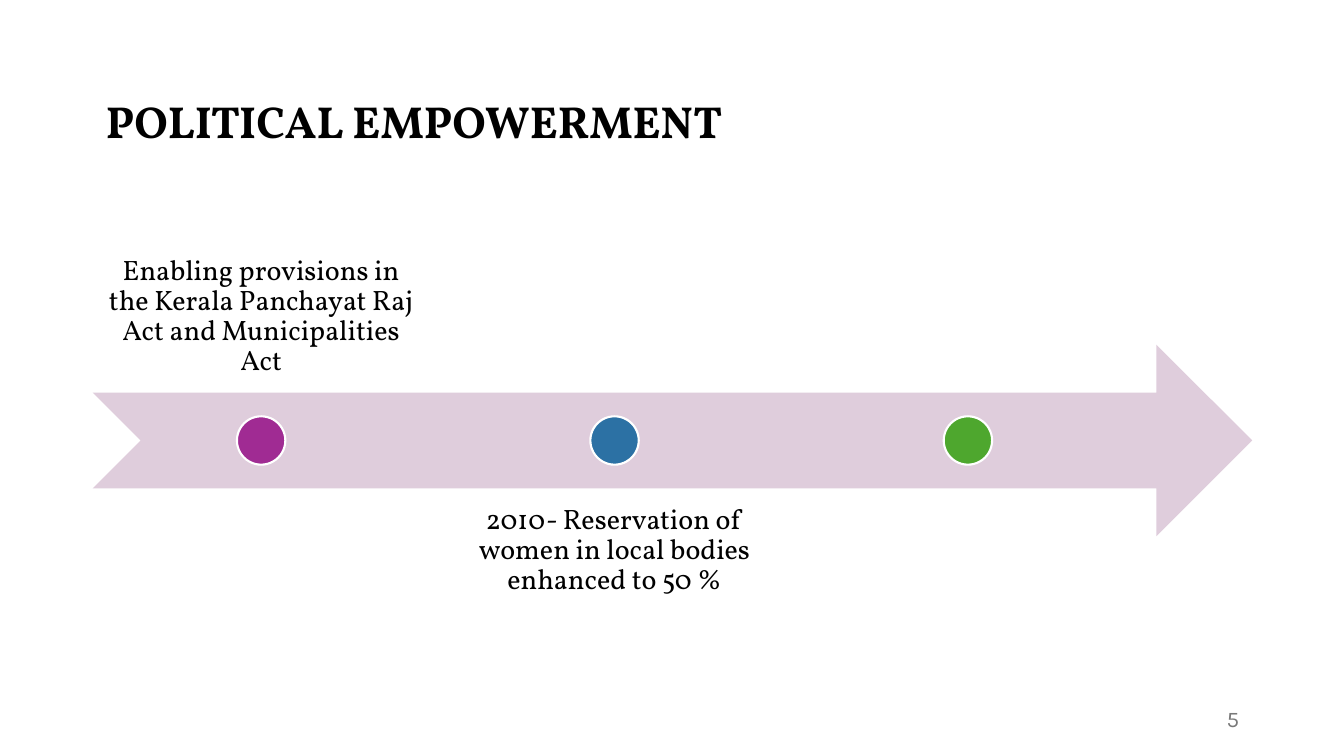
import pptx
import pptx.util
import pptx.dml.color
import pptx.enum.shapes
import pptx.enum.text

Inches = pptx.util.Inches
Pt = pptx.util.Pt
Shape = pptx.enum.shapes.MSO_SHAPE
Align = pptx.enum.text.PP_ALIGN
Anchor = pptx.enum.text.MSO_ANCHOR

TITLE = "POLITICAL EMPOWERMENT"
PAGE_NUMBER = "5"
# Milestones: dot colour, label
MILESTONES = [
    ("A02B93", "Enabling provisions in the Kerala Panchayat Raj Act and Municipalities Act"),
    ("2C71A4", "2010- Reservation of women in local bodies enhanced to 50 %"),
    ("4EA72E", ""),
]

LEFT, WIDTH = 0.92, 11.5
ARROW_TOP, BAND = 3.42, 1.9
LABEL_WIDTH, STEP = 3.34, 3.505
LABEL_TOPS = (2, 4.85)
DOT = 0.48


def color(value):
    return pptx.dml.color.RGBColor.from_string(value)


def add_text(page, place, text, size, font="Vollkorn", ink="000000", bold=False,
             align=Align.LEFT, anchor=Anchor.MIDDLE, insets=(0.13, 0.07), after=8):
    box = page.shapes.add_textbox(*map(Inches, place))
    frame = box.text_frame
    frame.word_wrap = True
    frame.vertical_anchor = anchor
    frame.margin_left = frame.margin_right = Inches(insets[0])
    frame.margin_top = frame.margin_bottom = Inches(insets[1])
    para = frame.paragraphs[0]
    para.alignment = align
    para.line_spacing = 0.9
    para.space_after = Pt(after)
    span = para.add_run()
    span.text = text
    span.font.name = font
    span.font.size = Pt(size)
    span.font.bold = bold
    span.font.color.rgb = color(ink)


def add_filled(page, kind, place, fill, outline=None):
    shape = page.shapes.add_shape(kind, *map(Inches, place))
    shape.shadow.inherit = False
    shape.fill.solid()
    shape.fill.fore_color.rgb = color(fill)
    if outline:
        shape.line.color.rgb = color(outline)
        shape.line.width = Pt(1.5)
    else:
        shape.line.fill.background()


def main():
    deck = pptx.Presentation()
    deck.slide_width, deck.slide_height = Inches(13.33), Inches(7.5)
    page = deck.slides.add_slide(deck.slide_layouts[6])

    add_text(page, (LEFT, 0.61, WIDTH, 1.24), TITLE, 32, bold=True)
    add_text(page, (9.42, 6.95, 3, 0.4), PAGE_NUMBER, 16, "Karla", "797979", align=Align.RIGHT)
    add_filled(page, Shape.NOTCHED_RIGHT_ARROW, (LEFT, ARROW_TOP, WIDTH, BAND), "DFCDDC")

    dot_top = ARROW_TOP + (BAND - DOT) / 2
    for index, (fill, label) in enumerate(MILESTONES):
        left = LEFT + index * STEP
        below = index % 2
        if label:
            add_text(page, (left, LABEL_TOPS[below], LABEL_WIDTH, BAND), label, 20,
                     align=Align.CENTER, anchor=Anchor.TOP if below else Anchor.BOTTOM,
                     insets=(0.16, 0.16), after=7)
        dot_left = left + (LABEL_WIDTH - DOT) / 2
        add_filled(page, Shape.OVAL, (dot_left, dot_top, DOT, DOT), fill, "FFFFFF")

    deck.save("out.pptx")


if __name__ == "__main__":
    main()
